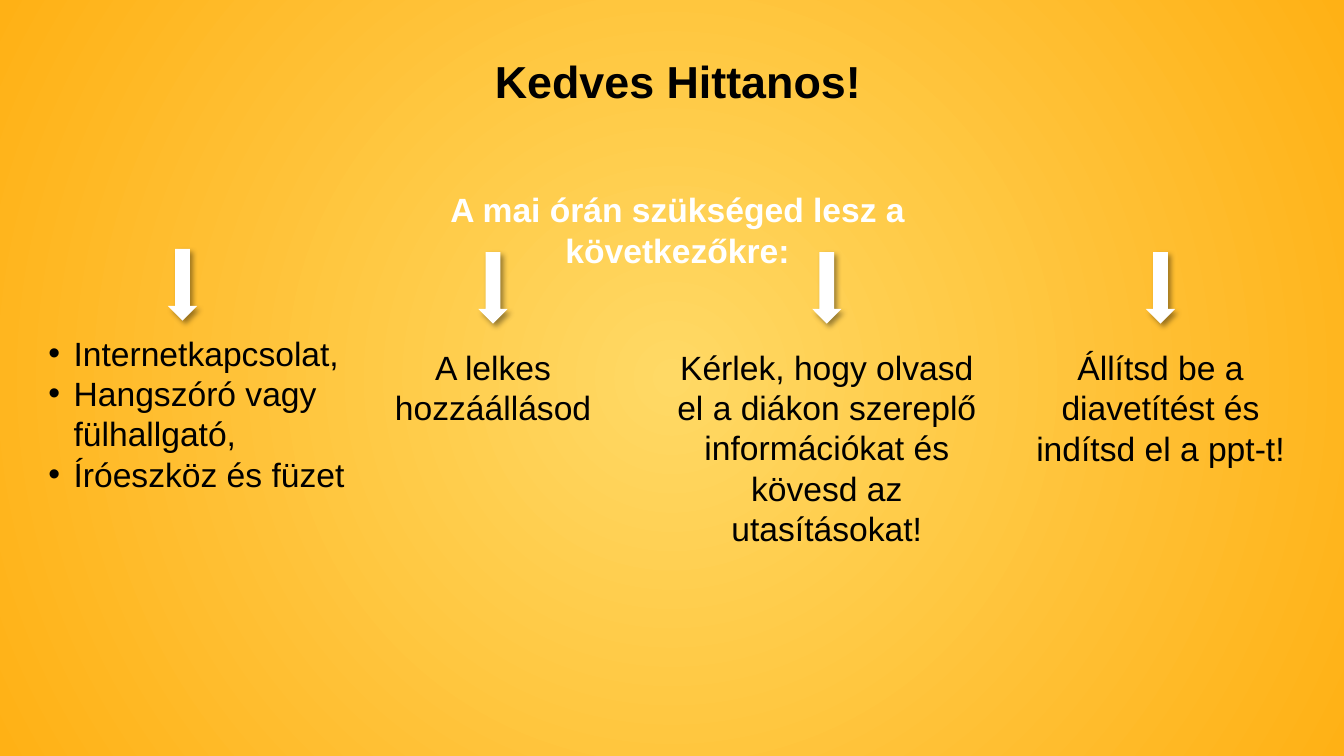
from lxml.etree import SubElement
from pptx import Presentation
from pptx.dml.color import RGBColor
from pptx.enum.shapes import MSO_SHAPE as Shape
from pptx.enum.text import PP_ALIGN as Align
from pptx.oxml import parse_xml
from pptx.oxml.ns import nsdecls, qn
from pptx.util import Inches, Pt

COLORS = {"ink": "000000", "white": "FFFFFF", "center": "FFD965", "edge": "FFB115"}
TITLE = "Kedves Hittanos!"
SUBTITLE = "A mai órán szükséged lesz a következőkre:"
SUPPLIES = ["Internetkapcsolat,", "Hangszóró vagy fülhallgató,", "Íróeszköz és füzet"]
STEPS = [
    ("A lelkes hozzáállásod", 2.71, 1.25),
    ("Kérlek, hogy olvasd el a diákon szereplő információkat és kövesd az utasításokat!", 3.18, 3.27),
    ("Állítsd be a diavetítést és indítsd el a ppt-t!", 2.71, 1.25),
]
BODY = {"size": Pt(24), "name": "Arial", "bold": False}
STRONG = {**BODY, "bold": True}
HEADING = {**STRONG, "size": Pt(32)}
NO_MARGIN = (0, 0, 0, 0)
MARGIN = (0.1, 0.05, 0.1, 0.05)
FIRST_STEP, PITCH = 4.89, 3.31
ARROW_WIDTH, ARROW_HEIGHT, ARROW_TOP = 0.29, 0.71, 2.5
STEP_TOP = 3.44

deck = Presentation()
deck.slide_width, deck.slide_height = Inches(13.33), Inches(7.5)
page = deck.slides.add_slide(deck.slide_layouts[6])


def rgb(name):
    return RGBColor.from_string(COLORS[name])


def paint_background():
    fill = page.background.fill
    fill.gradient()
    for stop, position, name in zip(fill.gradient_stops, (0, 1), ("center", "edge")):
        stop.position = position
        stop.color.rgb = rgb(name)
    gradient = page.background._cSld.find(".//" + qn("a:gradFill"))
    gradient.remove(gradient.find(qn("a:lin")))
    circle = SubElement(gradient, qn("a:path"), path="circle")
    SubElement(circle, qn("a:fillToRect"), {side: "50000" for side in "ltrb"})


def add_bullet(para):
    props = para._p.get_or_add_pPr()
    props.set("marL", str(Inches(0.25)))
    props.set("indent", str(-Inches(0.25)))
    color = SubElement(props, qn("a:buClr"))
    SubElement(color, qn("a:srgbClr"), val=COLORS["ink"])
    SubElement(props, qn("a:buFont"), typeface="Arial")
    SubElement(props, qn("a:buChar"), char="•")


def add_text(lines, bounds, style, color="ink", margins=NO_MARGIN, bullets=False):
    box = page.shapes.add_textbox(*map(Inches, bounds))
    frame = box.text_frame
    frame.word_wrap = True
    for side, margin in zip(("left", "top", "right", "bottom"), margins):
        setattr(frame, f"margin_{side}", Inches(margin))
    for index, line in enumerate(lines):
        para = frame.add_paragraph() if index else frame.paragraphs[0]
        para.alignment = Align.LEFT if bullets else Align.CENTER
        if bullets:
            add_bullet(para)
        span = para.add_run()
        span.text = line
        for name, value in style.items():
            setattr(span.font, name, value)
        span.font.color.rgb = rgb(color)


def add_arrow(center, top):
    bounds = (center - ARROW_WIDTH / 2, top, ARROW_WIDTH, ARROW_HEIGHT)
    arrow = page.shapes.add_shape(Shape.DOWN_ARROW, *map(Inches, bounds))
    arrow.fill.solid()
    arrow.fill.fore_color.rgb = rgb("white")
    arrow.line.fill.background()
    arrow._element.spPr.append(parse_xml(
        f'<a:effectLst {nsdecls("a")}><a:outerShdw blurRad="{Pt(4)}" dist="{Pt(3)}" '
        f'dir="2700000" algn="tl" rotWithShape="0"><a:srgbClr val="{COLORS["ink"]}">'
        '<a:alpha val="40000"/></a:srgbClr></a:outerShdw></a:effectLst>'))


paint_background()
add_text([TITLE], (1.67, 0.53, 10.11, 0.71), HEADING)
add_text([SUBTITLE], (3.66, 1.83, 6.12, 0.5), STRONG, "white", MARGIN)
add_text(SUPPLIES, (0.48, 3.3, 3.18, 1.71), BODY, bullets=True)
add_arrow(1.81, 2.47)
for column, (text, width, height) in enumerate(STEPS):
    center = FIRST_STEP + column * PITCH
    add_text([text], (center - width / 2, STEP_TOP, width, height), BODY)
    add_arrow(center, ARROW_TOP)

deck.save("out.pptx")
